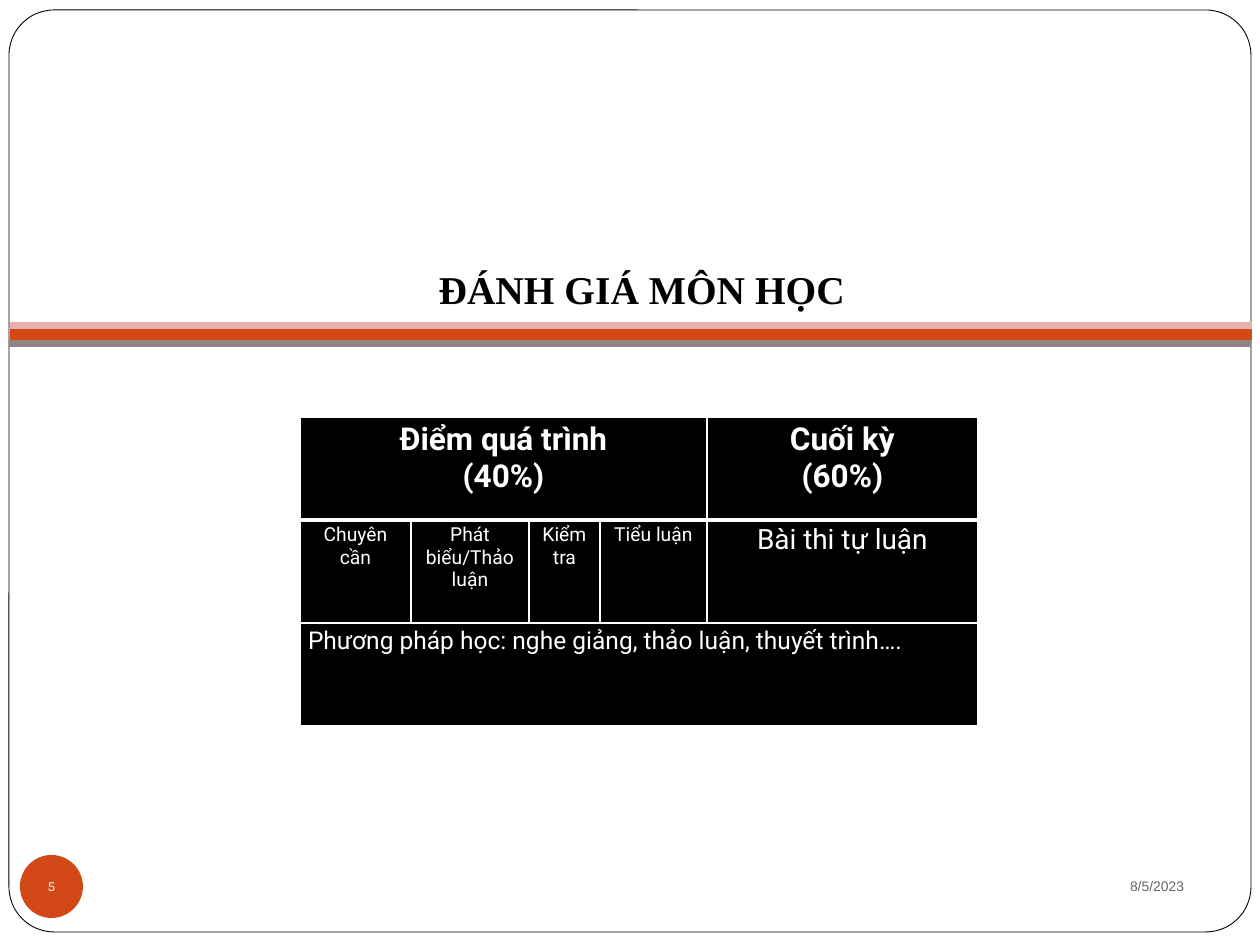
from lxml import etree
from pptx import Presentation
from pptx import util as u
from pptx.dml.color import RGBColor
from pptx.enum import shapes, text
from pptx.oxml.ns import qn

EMU_PER_PX = 914400 / 126
BLACK, WHITE, ORANGE = "000000", "FFFFFF", "D34817"
CENTER = text.PP_ALIGN.CENTER
COLUMN_WIDTHS = [111, 118, 71, 107, 271]
ROW_HEIGHT = 103


def px(value):
    return u.Emu(round(value * EMU_PER_PX))


def colour(value):
    return RGBColor.from_string(value)


def set_insets(target, left, top, right, bottom):
    target.margin_left, target.margin_top = px(left), px(top)
    target.margin_right, target.margin_bottom = px(right), px(bottom)


def write(frame, lines, size, font, text_colour, align=CENTER, bold=False):
    """Fill a text frame with one paragraph per line."""
    for index, line in enumerate(lines):
        paragraph = frame.add_paragraph() if index else frame.paragraphs[0]
        paragraph.alignment = align
        run = paragraph.add_run()
        run.text = line
        run.font.size = u.Pt(size)
        run.font.name = font
        run.font.bold = bold
        run.font.color.rgb = colour(text_colour)


def add_filled_shape(slide, kind, box, fill):
    shape = slide.shapes.add_shape(kind, *map(px, box))
    shape.shadow.inherit = False
    shape.fill.solid()
    shape.fill.fore_color.rgb = colour(fill)
    shape.line.fill.background()
    return shape


def add_background(slide):
    frame = add_filled_shape(slide, shapes.MSO_SHAPE.ROUNDED_RECTANGLE, (9, 10, 1242, 922), WHITE)
    frame.adjustments[0] = 0.049
    frame.line.color.rgb = colour(BLACK)
    frame.line.width = u.Pt(0.5)
    for left, top, height, fill in [(10, 328, 12, ORANGE), (10, 322, 7, "E6B1AC"), (9, 340, 7, "918485")]:
        add_filled_shape(slide, shapes.MSO_SHAPE.RECTANGLE, (left, top, 1242, height), fill)


def format_title(slide, title_text):
    """Place the title in front of the background and write it."""
    title = slide.shapes.title
    slide.shapes._spTree.append(title._element)
    title.left, title.top, title.width, title.height = map(px, (341, 218, 602, 106))
    frame = title.text_frame
    frame.word_wrap = True
    frame.auto_size = text.MSO_AUTO_SIZE.NONE
    frame.vertical_anchor = text.MSO_ANCHOR.BOTTOM
    set_insets(frame, 12, 6, 12, 12)
    write(frame, [title_text], 22.5, "Times New Roman", BLACK, bold=True)


def add_date(slide, date):
    frame = slide.shapes.add_textbox(*map(px, (851, 853, 341, 66))).text_frame
    frame.word_wrap = True
    frame.vertical_anchor = text.MSO_ANCHOR.MIDDLE
    set_insets(frame, 8, 4, 8, 4)
    write(frame, [date], 7.9, "Arial", "696464", text.PP_ALIGN.RIGHT)


def add_page_number(slide, number):
    badge = add_filled_shape(slide, shapes.MSO_SHAPE.OVAL, (20, 855, 63, 63), ORANGE)
    frame = badge.text_frame
    frame.word_wrap = False
    frame.vertical_anchor = text.MSO_ANCHOR.MIDDLE
    set_insets(frame, 0, 0, 0, 0)
    write(frame, [number], 7.9, "Karla", WHITE)


def set_borders(cell, top, bottom):
    """Draw white borders, 1 pt at the sides."""
    properties = cell._tc.get_or_add_tcPr()
    for tag, width in [("a:lnL", 1), ("a:lnR", 1), ("a:lnT", top), ("a:lnB", bottom)]:
        line = etree.SubElement(properties, qn(tag), w=str(u.Pt(width)))
        fill = etree.SubElement(line, qn("a:solidFill"))
        etree.SubElement(fill, qn("a:srgbClr"), val=WHITE)


def add_grading_table(slide):
    table = slide.shapes.add_table(
        3, len(COLUMN_WIDTHS), px(300), px(417), px(sum(COLUMN_WIDTHS)), px(3 * ROW_HEIGHT)
    ).table
    for column, width in zip(table.columns, COLUMN_WIDTHS):
        column.width = px(width)
    for index, row in enumerate(table.rows):
        row.height = px(ROW_HEIGHT)
        for cell in row.cells:
            set_borders(cell, top=3 if index == 1 else 1, bottom=3 if index == 0 else 1)
            cell.fill.solid()
            cell.fill.fore_color.rgb = colour(BLACK)
            set_insets(cell, 8, 4, 8, 4)
    table.cell(0, 0).merge(table.cell(0, 3))
    table.cell(2, 0).merge(table.cell(2, 4))

    contents = [
        (0, 0, ["Điểm quá trình", "(40%)"], 18),
        (0, 4, ["Cuối kỳ", "(60%)"], 18),
        (1, 0, ["Chuyên cần"], 11),
        (1, 1, ["Phát biểu/Thảo luận"], 11),
        (1, 2, ["Kiểm tra"], 11),
        (1, 3, ["Tiểu luận"], 11),
        (1, 4, ["Bài thi tự luận"], 16),
        (2, 0, ["Phương pháp học: nghe giảng, thảo luận, thuyết trình…."], 14),
    ]
    for row, column, lines, size in contents:
        align = text.PP_ALIGN.LEFT if row == 2 else CENTER
        write(table.cell(row, column).text_frame, lines, size, "Roboto", WHITE, align, bold=row == 0)


def main():
    presentation = Presentation()
    presentation.slide_width, presentation.slide_height = px(1260), px(945)
    slide = presentation.slides.add_slide(presentation.slide_layouts[5])
    add_background(slide)
    format_title(slide, "ĐÁNH GIÁ MÔN HỌC")
    add_date(slide, "8/5/2023")
    add_page_number(slide, "5")
    add_grading_table(slide)
    presentation.save("out.pptx")


if __name__ == "__main__":
    main()
